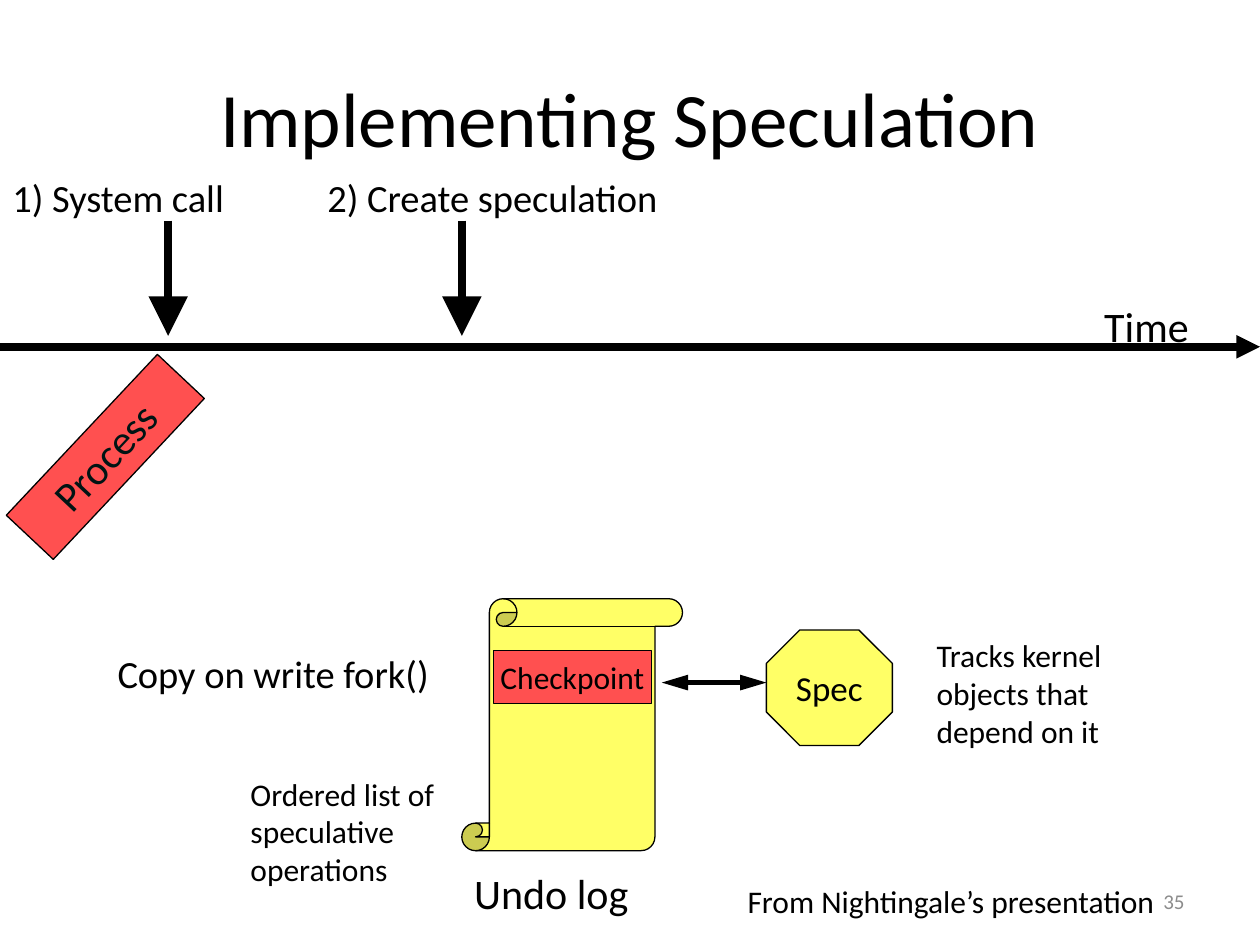
from dataclasses import dataclass

from lxml.etree import SubElement
from pptx import Presentation
from pptx.dml.color import RGBColor
from pptx.enum.shapes import MSO_CONNECTOR, MSO_SHAPE
from pptx.enum.text import MSO_ANCHOR, MSO_AUTO_SIZE, PP_ALIGN
from pptx.oxml.ns import qn
from pptx.util import Cm, Pt


@dataclass(frozen=True)
class Theme:
    """Fonts, type sizes and colours of the slide."""

    font: str = "Calibri"
    title: float = 44
    large: float = 24
    step: float = 22
    medium: float = 20
    body: float = 18
    small: float = 12
    outline: float = 0.75
    thin: float = 3
    thick: float = 4.5
    black: RGBColor = RGBColor(0x00, 0x00, 0x00)
    ink: RGBColor = RGBColor(0x00, 0x14, 0x14)
    grey: RGBColor = RGBColor(0x8C, 0x8C, 0x8C)
    red: RGBColor = RGBColor(0xFF, 0x50, 0x50)
    yellow: RGBColor = RGBColor(0xFF, 0xFF, 0x66)


class SlideBuilder:
    """Adds styled elements to one slide."""

    def __init__(self, slide, theme):
        """Keep the slide and its theme."""
        self.slide = slide
        self.theme = theme

    def add_text(self, shape, text, size, color=None, align=PP_ALIGN.LEFT,
                 anchor=MSO_ANCHOR.TOP, wrap=True):
        """Put one run of text into a shape."""
        frame = shape.text_frame
        frame.auto_size = MSO_AUTO_SIZE.NONE
        frame.word_wrap = wrap
        frame.vertical_anchor = anchor
        paragraph = frame.paragraphs[0]
        paragraph.alignment = align
        run = paragraph.add_run()
        run.text = text
        run.font.name = self.theme.font
        run.font.size = Pt(size)
        run.font.color.rgb = color or self.theme.black

    def title(self, text, left, top, width, height):
        """Place and fill the title placeholder."""
        shape = self.slide.shapes.title
        shape.left, shape.top = Cm(left), Cm(top)
        shape.width, shape.height = Cm(width), Cm(height)
        self.add_text(shape, text, self.theme.title, align=PP_ALIGN.CENTER,
                      anchor=MSO_ANCHOR.MIDDLE)

    def label(self, text, left, top, width, height, size, **style):
        """Add a text box."""
        shape = self.slide.shapes.add_textbox(Cm(left), Cm(top), Cm(width), Cm(height))
        self.add_text(shape, text, size, **style)

    def box(self, kind, left, top, width, height, fill, adjustment=None, rotation=0):
        """Add a filled and outlined preset shape."""
        shape = self.slide.shapes.add_shape(kind, Cm(left), Cm(top), Cm(width), Cm(height))
        shape.shadow.inherit = False
        shape.rotation = rotation
        shape.fill.solid()
        shape.fill.fore_color.rgb = fill
        shape.line.color.rgb = self.theme.black
        shape.line.width = Pt(self.theme.outline)
        if adjustment is not None:
            shape.adjustments[0] = adjustment
        return shape

    def arrow(self, start, end, weight, ends=("tailEnd",), width="med", length="med"):
        """Add a straight line with triangular arrowheads."""
        connector = self.slide.shapes.add_connector(
            MSO_CONNECTOR.STRAIGHT, *(Cm(value) for value in (*start, *end)))
        connector.line.color.rgb = self.theme.black
        connector.line.width = Pt(weight)
        properties = connector._element.spPr
        line = properties.find(qn("a:ln"))
        for end_name in ends:
            SubElement(line, qn(f"a:{end_name}"), type="triangle", w=width, len=length)
        SubElement(properties, qn("a:effectLst"))


def build_timeline(builder):
    """Draw the time axis, its numbered steps and the process."""
    theme = builder.theme
    process = builder.box(MSO_SHAPE.RECTANGLE, -0.1, 8.56, 4.45, 1.3, theme.red,
                          rotation=313.2)
    builder.add_text(process, "Process", theme.large, theme.ink, PP_ALIGN.CENTER)
    builder.arrow((0, 6.99), (25.4, 6.99), theme.thick)
    steps = (("1) System call", 0, 9.73, 3.39),
             ("2) Create speculation", 6.35, 14.6, 9.31))
    for text, left, width, arrow_x in steps:
        builder.arrow((arrow_x, 4.45), (arrow_x, 6.77), theme.thick,
                      width="lg", length="lg")
        builder.label(text, left, 3.39, width, 1.2, theme.step)
    builder.label("Time", 22.01, 5.93, 3.18, 1.28, theme.large)


def build_undo_log(builder):
    """Draw the undo log, its checkpoint and the speculation object."""
    theme = builder.theme
    centred = {"align": PP_ALIGN.CENTER, "anchor": MSO_ANCHOR.MIDDLE, "wrap": False}
    builder.box(MSO_SHAPE.VERTICAL_SCROLL, 9.31, 12.07, 4.45, 5.08, theme.yellow, 0.125)
    builder.label("Undo log", 9.31, 17.36, 4.66, 1.28, theme.large)
    checkpoint = builder.box(MSO_SHAPE.RECTANGLE, 9.95, 13.12, 3.18, 1.06, theme.red)
    builder.add_text(checkpoint, "Checkpoint", theme.body, **centred)
    builder.arrow((15.45, 13.76), (13.34, 13.76), theme.thin,
                  ends=("headEnd", "tailEnd"), length="lg")
    speculation = builder.box(MSO_SHAPE.OCTAGON, 15.45, 12.7, 2.54, 2.33,
                              theme.yellow, 0.29)
    builder.add_text(speculation, "Spec", theme.medium, **centred)
    builder.label("Copy on write fork()", 2.12, 12.98, 7.62, 1.2, theme.step)
    builder.label("Ordered list of speculative operations",
                  4.8, 15.49, 4.24, 2.56, theme.body)
    builder.label("Tracks kernel objects that depend on it",
                  18.63, 12.7, 4.24, 2.56, theme.body)


def main():
    """Build and save the presentation."""
    presentation = Presentation()
    presentation.slide_width, presentation.slide_height = Cm(25.4), Cm(19.05)
    slide = presentation.slides.add_slide(presentation.slide_layouts[5])
    theme = Theme()
    builder = SlideBuilder(slide, theme)
    builder.title("Implementing Speculation", 1.27, 0.76, 22.86, 3.18)
    build_timeline(builder)
    build_undo_log(builder)
    builder.label("From Nightingale’s presentation", 14.82, 17.65, 8.81, 1.02,
                  theme.body, wrap=False)
    builder.label("35", 18.2, 17.65, 5.93, 1.02, theme.small, color=theme.grey,
                  align=PP_ALIGN.RIGHT, anchor=MSO_ANCHOR.MIDDLE)
    presentation.save("out.pptx")


if __name__ == "__main__":
    main()
